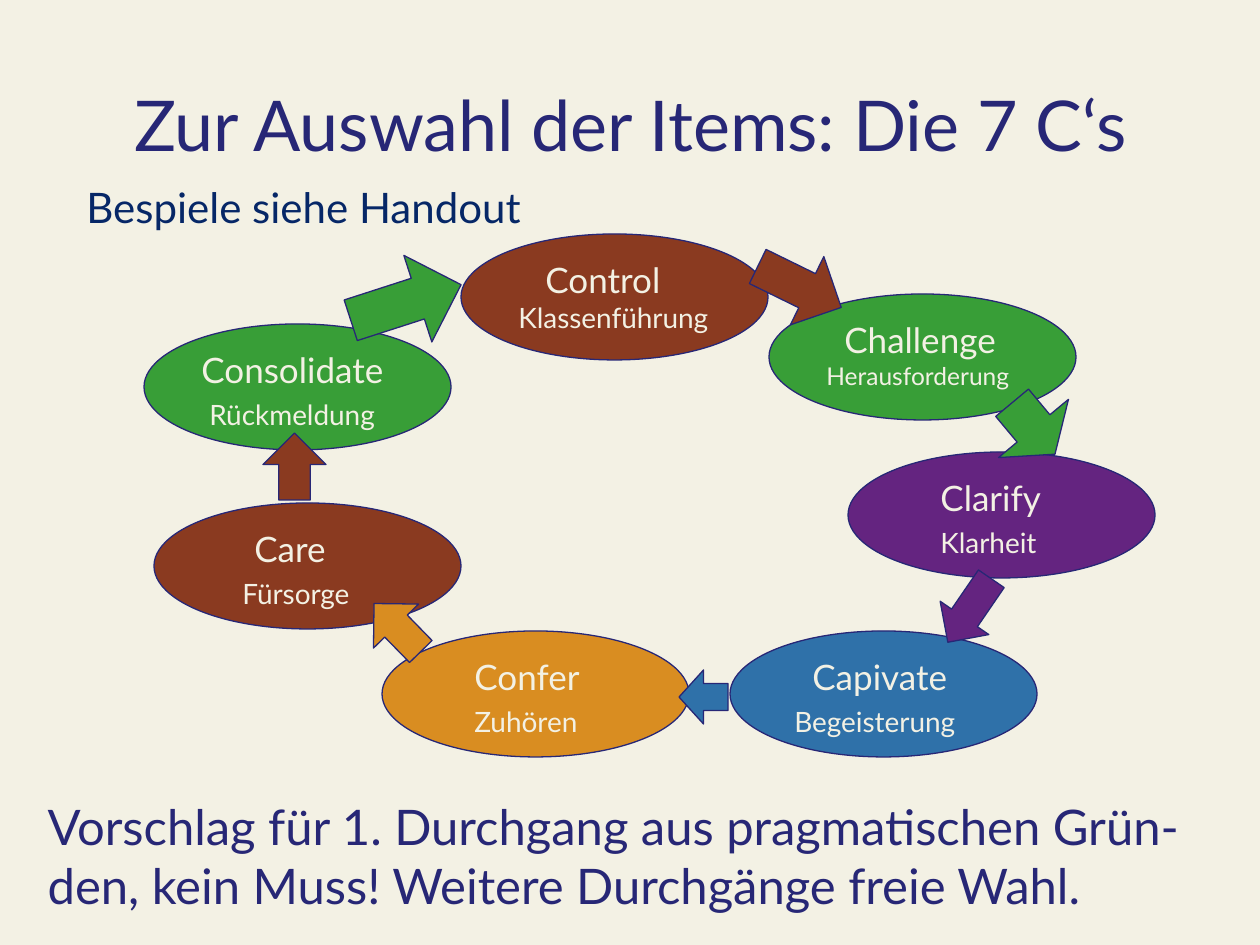
from pptx import Presentation
from pptx.dml.color import RGBColor
from pptx.enum.shapes import MSO_SHAPE
from pptx.enum.text import MSO_ANCHOR, PP_ALIGN
from pptx.oxml.ns import qn
from pptx.util import Emu, Pt

OVAL, ARROW = MSO_SHAPE.OVAL, MSO_SHAPE.RIGHT_ARROW
TOP, MIDDLE = MSO_ANCHOR.TOP, MSO_ANCHOR.MIDDLE
LEFT, CENTER = PP_ALIGN.LEFT, PP_ALIGN.CENTER

FONT = "Lato"
CREAM, INDIGO, NAVY = "F3F1E4", "272776", "062767"
BROWN, GREEN, PURPLE = "8A3A20", "389E37", "642480"
BLUE, ORANGE = "2F71A9", "D98D21"
OVAL_W, OVAL_H = 307, 126

STATIONS = [
    (461, 234, BROWN, ("Control", 27), ("Klassenführung", 0), 16, 0),
    (769, 294, GREEN, ("Challenge", 18), ("Herausforderung", 0), 14, 0),
    (154, 503, BROWN, ("Care", 43), ("Fürsorge", 31), 16, 4),
    (382, 631, ORANGE, ("Confer", 35), ("Zuhören", 35), 16, 4),
    (730, 631, BLUE, ("Capivate", 25), ("Begeisterung", 7), 16, 4),
    (144, 324, GREEN, ("Consolidate", 0), ("Rückmeldung", 8), 16, 4),
    (848, 452, PURPLE, ("Clarify", 35), ("Klarheit", 35), 16, 4),
]

ARROWS = [
    (753, 249, 93, 76, 26.1, BROWN, (0.5, 0.5)),
    (1000, 383, 67, 91, 50.2, GREEN, (0.47, 0.5)),
    (931, 581, 77, 59, 124.4, PURPLE, (0.53, 0.5)),
    (679, 670, 49, 54, 180, BLUE, (0.5, 0.5)),
    (364, 596, 67, 63, 225.7, ORANGE, (0.5, 0.5)),
    (261, 435, 67, 63, 270, BROWN, (0.5, 0.5)),
    (348, 257, 116, 91, 342.1, GREEN, (0.47, 0.5)),
]


def px(n):
    return Emu(round(n * 914400 / 126))


def rgb(color):
    return RGBColor.from_string(color)


def write(p, text, size, color, align=LEFT, indent=0, before=0):
    p.text = text
    pPr = p._p.get_or_add_pPr()
    pPr.set("marL", str(px(indent)))
    pPr.set("indent", "0")
    p.alignment = align
    p.space_before = Pt(before)
    pPr.append(pPr.makeelement(qn("a:buNone"), {}))
    for r in p.runs:
        r.font.name = FONT
        r.font.size = Pt(size)
        r.font.color.rgb = rgb(color)


def fill_placeholder(sp, box, text, size, align, anchor):
    sp.left, sp.top, sp.width, sp.height = map(px, box)
    tf = sp.text_frame
    tf.vertical_anchor = anchor
    write(tf.paragraphs[0], text, size, INDIGO, align)


def add_filled(s, kind, x, y, w, h, color):
    sp = s.shapes.add_shape(kind, px(x), px(y), px(w), px(h))
    sp.shadow.inherit = False
    sp.fill.solid()
    sp.fill.fore_color.rgb = rgb(color)
    sp.line.color.rgb = rgb(INDIGO)
    sp.line.width = Pt(0.75)
    return sp


def add_station(s, x, y, color, term, german, size, gap):
    tf = add_filled(s, OVAL, x, y, OVAL_W, OVAL_H, color).text_frame
    tf.word_wrap = True
    tf.vertical_anchor = TOP
    tf.margin_right = 0
    write(tf.paragraphs[0], term[0], 20, CREAM, indent=term[1])
    write(tf.add_paragraph(), german[0], size, CREAM, indent=german[1], before=gap)


def add_arrow(s, x, y, w, h, angle, color, adjustments):
    sp = add_filled(s, ARROW, x, y, w, h, color)
    sp.rotation = angle
    for i, value in enumerate(adjustments):
        sp.adjustments[i] = value


def add_label(s, x, y, w, h, text, size, color):
    tf = s.shapes.add_textbox(px(x), px(y), px(w), px(h)).text_frame
    tf.word_wrap = False
    write(tf.paragraphs[0], text, size, color)


def main():
    prs = Presentation()
    prs.slide_width, prs.slide_height = px(1260), px(945)
    s = prs.slides.add_slide(prs.slide_layouts[1])
    s.background.fill.solid()
    s.background.fill.fore_color.rgb = rgb(CREAM)

    fill_placeholder(s.shapes.title, (95, 45, 1071, 158),
                     "Zur Auswahl der Items: Die 7 C‘s", 40, CENTER, MIDDLE)
    fill_placeholder(s.placeholders[1], (35, 790, 1191, 135),
                     "Vorschlag für 1. Durchgang aus pragmatischen Grün-den, "
                     "kein Muss! Weitere Durchgänge freie Wahl.", 28, LEFT, TOP)
    for station in STATIONS:
        add_station(s, *station)
    for arrow in ARROWS:
        add_arrow(s, *arrow)
    add_label(s, 74, 175, 467, 63, "Bespiele siehe Handout", 24, NAVY)

    prs.save("out.pptx")


if __name__ == "__main__":
    main()
